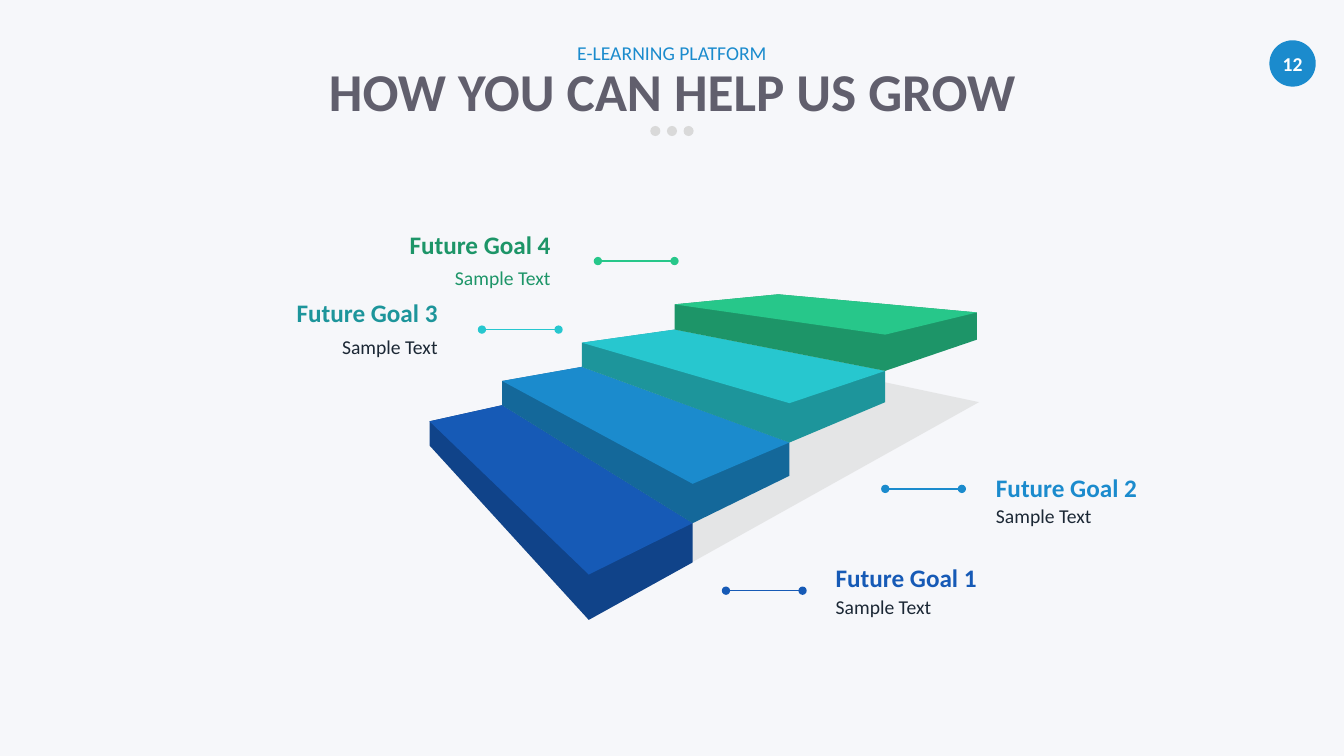
from lxml.etree import SubElement
from pptx import Presentation
from pptx.dml.color import RGBColor
from pptx.enum.shapes import MSO_CONNECTOR, MSO_SHAPE
from pptx.enum.text import MSO_ANCHOR, PP_ALIGN
from pptx.oxml.ns import qn
from pptx.util import Inches, Pt

FONT = "Calibri"
BLUE, GRAY, DARK = "1B8BCD", "D9D9D9", "1C2835"
PAGE_NUMBER = "12"

HEADINGS = [
    ("HOW YOU CAN HELP US GROW", (3.21, 0.58, 6.92, 0.64), 38, "615F6D", True),
    ("E-LEARNING PLATFORM", (5.71, 0.4, 1.91, 0.24), 14, BLUE, False),
]
FLOOR_SHADOW = [(7.96, 3.62), (4.26, 4.42), (5.84, 6.15), (9.71, 3.99)]

# top: left, back, right, front corners; drops: height below left, front, right
STEPS = [
    {"top": [(4.26, 4.18), (4.98, 4.02), (6.87, 5.19), (5.84, 5.7)],
     "drops": (0.24, 0.45, 0.39), "colors": ("165AB6", "104389")},
    {"top": [(4.98, 3.78), (5.77, 3.64), (7.83, 4.39), (6.87, 4.8)],
     "drops": (0.24, 0.39, 0.33), "colors": (BLUE, "14689A")},
    {"top": [(5.77, 3.4), (6.69, 3.27), (8.78, 3.68), (7.83, 4)],
     "drops": (0.24, 0.39, 0.31), "colors": ("27C7CF", "1D959B")},
    {"top": [(6.69, 3.02), (7.72, 2.92), (9.69, 3.1), (8.78, 3.32)],
     "drops": (0.25, 0.36, 0.27), "colors": ("27C78A", "1D9568")},
]
GOALS = [
    {"title": "Future Goal 1", "text": "Sample Text", "align": PP_ALIGN.LEFT,
     "edge": 8.19, "tops": (5.53, 5.85), "colors": ("165AB6", DARK),
     "line": (7.2, 5.86, "165AB6")},
    {"title": "Future Goal 2", "text": "Sample Text", "align": PP_ALIGN.LEFT,
     "edge": 9.78, "tops": (4.64, 4.95), "colors": (BLUE, DARK),
     "line": (8.78, 4.85, BLUE)},
    {"title": "Future Goal 3", "text": "Sample Text", "align": PP_ALIGN.RIGHT,
     "edge": 4.44, "tops": (2.9, 3.27), "colors": ("1D959B", DARK),
     "line": (4.78, 3.27, "27C7CF")},
    {"title": "Future Goal 4", "text": "Sample Text", "align": PP_ALIGN.RIGHT,
     "edge": 5.56, "tops": (2.23, 2.59), "colors": ("1D9568", "1D9568"),
     "line": (5.93, 2.59, "27C78A")},
]
GOAL_WIDTH, LINE_LENGTH = 1.67, 0.76


def rgb(color):
    return RGBColor.from_string(color)


def paint(shape, color):
    shape.shadow.inherit = False
    shape.fill.solid()
    shape.fill.fore_color.rgb = rgb(color)
    shape.line.fill.background()


def write(shape, text, size, color, bold, align):
    paragraph = shape.text_frame.paragraphs[0]
    paragraph.text = text
    paragraph.alignment = align
    font = paragraph.font
    font.name, font.size, font.bold = FONT, Pt(size), bold
    font.color.rgb = rgb(color)


def center_frame(shape):
    frame = shape.text_frame
    frame.margin_left = frame.margin_right = 0
    frame.margin_top = frame.margin_bottom = 0
    frame.vertical_anchor = MSO_ANCHOR.MIDDLE
    frame.word_wrap = False


def add_text(slide, box, text, size, color, bold, align):
    shape = slide.shapes.add_textbox(*map(Inches, box))
    shape.text_frame.word_wrap = True
    write(shape, text, size, color, bold, align)
    return shape


def add_circle(slide, left, top, size, color):
    shape = slide.shapes.add_shape(
        MSO_SHAPE.OVAL, *map(Inches, (left, top, size, size)))
    paint(shape, color)
    return shape


def add_polygon(slide, points, color):
    corners = [(Inches(x), Inches(y)) for x, y in points]
    builder = slide.shapes.build_freeform(*corners[0], scale=1.0)
    builder.add_line_segments(corners[1:], close=True)
    shape = builder.convert_to_shape()
    paint(shape, color)
    return shape


def add_step(slide, step):
    left, back, right, front = step["top"]
    lowered = [(x, y + drop) for (x, y), drop
               in zip((left, front, right), step["drops"])]
    top_color, side_color = step["colors"]
    add_polygon(slide, [left, *lowered, right, back], side_color)
    add_polygon(slide, step["top"], top_color)


def add_goal(slide, goal):
    x, y, color = goal["line"]
    connector = slide.shapes.add_connector(
        MSO_CONNECTOR.STRAIGHT, *map(Inches, (x, y, x + LINE_LENGTH, y)))
    connector.line.color.rgb = rgb(color)
    connector.line.width = Pt(1)
    outline = connector.line._get_or_add_ln()
    for end in ("a:headEnd", "a:tailEnd"):
        SubElement(outline, qn(end), type="oval")
    SubElement(connector._element.spPr, qn("a:effectLst"))

    align = goal["align"]
    left = goal["edge"] - (GOAL_WIDTH if align == PP_ALIGN.RIGHT else 0)
    rows = zip((goal["title"], goal["text"]), goal["tops"], (0.4, 0.34),
               (18, 14), goal["colors"], (True, False))
    for text, top, height, size, text_color, bold in rows:
        add_text(slide, (left, top, GOAL_WIDTH, height),
                 text, size, text_color, bold, align)


def main():
    presentation = Presentation()
    presentation.slide_width = Inches(13.33)
    presentation.slide_height = Inches(7.5)
    slide = presentation.slides.add_slide(presentation.slide_layouts[6])
    slide.background.fill.solid()
    slide.background.fill.fore_color.rgb = rgb("F6F7FA")

    badge = add_circle(slide, 12.59, 0.4, 0.46, BLUE)
    center_frame(badge)
    write(badge, PAGE_NUMBER, 14, "FFFFFF", True, PP_ALIGN.CENTER)
    for text, box, size, color, bold in HEADINGS:
        center_frame(add_text(slide, box, text, size, color, bold,
                              PP_ALIGN.CENTER))
    for index in range(3):
        add_circle(slide, 6.45 + index * 0.165, 1.25, 0.1, GRAY)

    floor = add_polygon(slide, FLOOR_SHADOW, GRAY)
    fill_color = floor._element.spPr.find(qn("a:solidFill"))[0]
    SubElement(fill_color, qn("a:alpha"), val="59000")
    for step in STEPS:
        add_step(slide, step)
    for goal in GOALS:
        add_goal(slide, goal)

    presentation.save("out.pptx")


if __name__ == "__main__":
    main()
